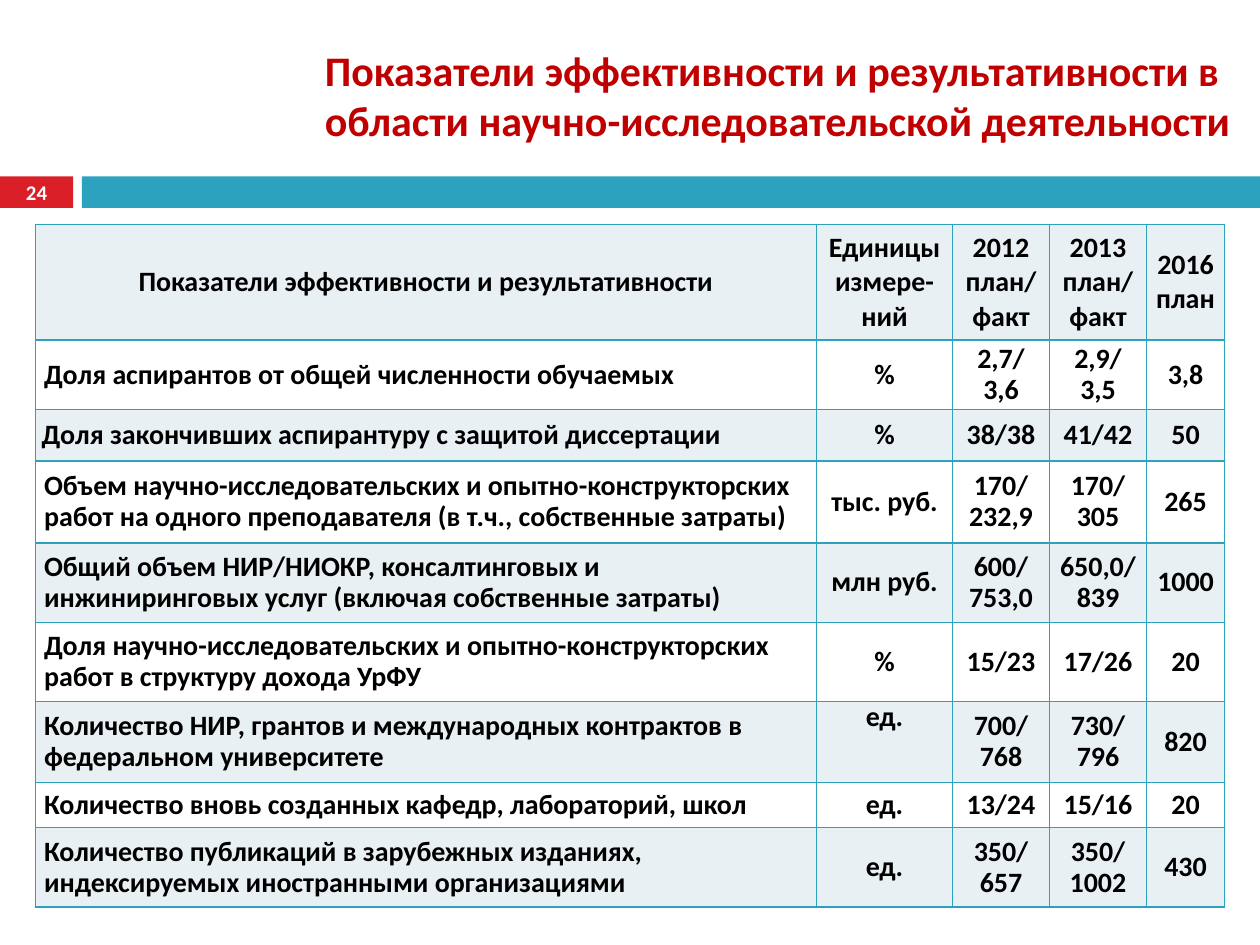
from lxml import etree
from pptx import Presentation
from pptx.dml.color import RGBColor
from pptx.enum.shapes import MSO_SHAPE as SHAPE
from pptx.enum.text import MSO_ANCHOR as ANCHOR, PP_ALIGN as ALIGN
from pptx.oxml.ns import qn
from pptx.util import Inches, Pt

RED = RGBColor(0xDA, 0x1F, 0x28)
TEAL = RGBColor(0x2D, 0xA2, 0xBF)
TITLE_RED = RGBColor(0xC0, 0x00, 0x00)
BAND = RGBColor(0xE8, 0xF0, 0xF4)
WHITE = RGBColor(0xFF, 0xFF, 0xFF)
BLACK = RGBColor(0x00, 0x00, 0x00)


def style(p, size, color, align):
    p.alignment = align
    for r in p.runs:
        r.font.name = "Calibri"
        r.font.size = Pt(size)
        r.font.bold = True
        r.font.color.rgb = color


def add_borders(cell):
    tcPr = cell._tc.get_or_add_tcPr()
    for i, side in enumerate(("a:lnL", "a:lnR", "a:lnT", "a:lnB")):
        ln = etree.Element(qn(side), w=str(Pt(1)))
        fill = etree.SubElement(ln, qn("a:solidFill"))
        etree.SubElement(fill, qn("a:srgbClr"), val=str(TEAL))
        tcPr.insert(i, ln)


prs = Presentation()
prs.slide_width, prs.slide_height = Inches(10), Inches(7.5)
s = prs.slides.add_slide(prs.slide_layouts[6])

# Divider bars
for left, width, color in ((0, 0.58, RED), (0.65, 9.35, TEAL)):
    sp = s.shapes.add_shape(SHAPE.RECTANGLE, Inches(left), Inches(1.4),
                            Inches(width), Inches(0.25))
    sp.shadow.inherit = False
    sp.fill.solid()
    sp.fill.fore_color.rgb = color
    sp.line.fill.background()

# Slide number
sp = s.shapes.add_textbox(Inches(0), Inches(1.39), Inches(0.58), Inches(0.27))
tf = sp.text_frame
tf.word_wrap = True
tf.vertical_anchor = ANCHOR.MIDDLE
tf.margin_top = tf.margin_bottom = 0
tf.text = "24"
style(tf.paragraphs[0], 11.9, WHITE, ALIGN.CENTER)

# Title
sp = s.shapes.add_textbox(Inches(2.48), Inches(0.21), Inches(7.4), Inches(1.08))
tf = sp.text_frame
tf.word_wrap = True
tf.vertical_anchor = ANCHOR.MIDDLE
tf.text = ("Показатели эффективности и результативности в области "
           "научно-исследовательской деятельности")
style(tf.paragraphs[0], 24, TITLE_RED, ALIGN.LEFT)

# Indicators table: a line break starts a new paragraph
col_widths = [6.2, 1.08, 0.77, 0.77, 0.62]
row_heights = [0.92, 0.55, 0.41, 0.65, 0.63, 0.63, 0.64, 0.36, 0.63]
rows = [
    ("Показатели эффективности и результативности", "Единицы измере-ний",
     "2012\nплан/ факт", "2013\nплан/факт", "2016 план"),
    ("Доля аспирантов от общей численности обучаемых", "%",
     "2,7/\n3,6", "2,9/\n3,5", "3,8"),
    ("Доля закончивших аспирантуру с защитой диссертации", "%",
     "38/38", "41/42", "50"),
    ("Объем научно-исследовательских и опытно-конструкторских работ "
     "на одного преподавателя (в т.ч., собственные затраты)", "тыс. руб.",
     "170/\n232,9", "170/\n305", "265"),
    ("Общий объем НИР/НИОКР, консалтинговых и инжиниринговых услуг "
     "(включая собственные затраты)", "млн руб.",
     "600/\n753,0", "650,0/\n839", "1000"),
    ("Доля научно-исследовательских и опытно-конструкторских работ "
     "в структуру дохода УрФУ", "%", "15/23", "17/26", "20"),
    ("Количество НИР, грантов и международных контрактов "
     "в федеральном университете", "ед.", "700/\n768", "730/\n796", "820"),
    ("Количество вновь созданных кафедр, лабораторий, школ", "ед.",
     "13/24", "15/16", "20"),
    ("Количество публикаций в зарубежных изданиях, "
     "индексируемых иностранными организациями", "ед.",
     "350/\n657", "350/\n1002", "430"),
]
table = s.shapes.add_table(len(rows), len(col_widths), Inches(0.28), Inches(1.78),
                           Inches(9.45), Inches(5.43)).table
for col, width in zip(table.columns, col_widths):
    col.width = Inches(width)
for row, height in zip(table.rows, row_heights):
    row.height = Inches(height)

for i, texts in enumerate(rows):
    for j, text in enumerate(texts):
        cell = table.cell(i, j)
        cell.text = text
        cell.margin_left = cell.margin_right = Inches(0.05 if i == 2 else 0.07)
        cell.margin_top = cell.margin_bottom = 0
        cell.vertical_anchor = ANCHOR.TOP if (i, j) == (6, 1) else ANCHOR.MIDDLE
        if i % 2 == 0:
            cell.fill.solid()
            cell.fill.fore_color.rgb = BAND
        else:
            cell.fill.background()
        add_borders(cell)
        for p in cell.text_frame.paragraphs:
            style(p, 16, BLACK, ALIGN.LEFT if i and j == 0 else ALIGN.CENTER)
            if i not in (0, 2):
                p.line_spacing = 0.9

prs.save("out.pptx")
